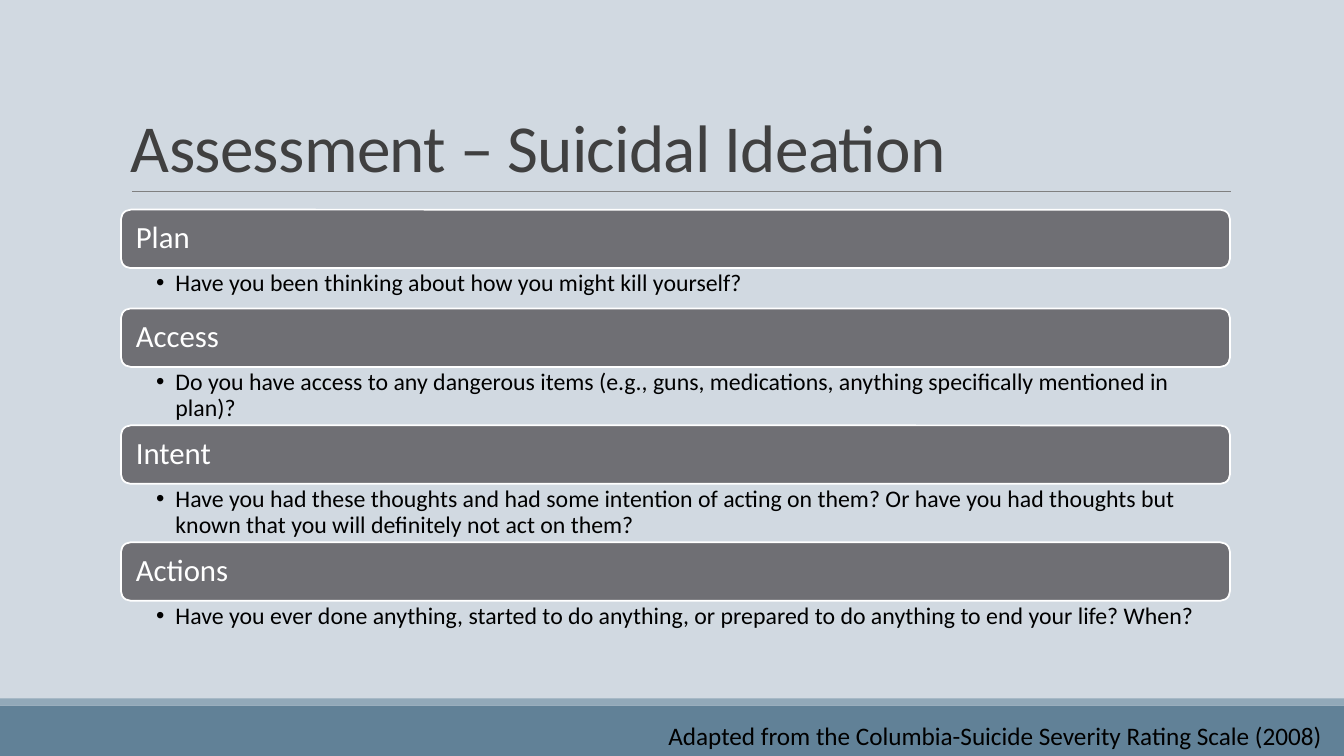
from lxml import etree
from pptx import Presentation
from pptx.dml.color import RGBColor
from pptx.enum.shapes import MSO_CONNECTOR, MSO_SHAPE
from pptx.enum.text import MSO_ANCHOR, PP_ALIGN
from pptx.oxml.ns import qn
from pptx.util import Inches, Pt

RECTANGLE = MSO_SHAPE.RECTANGLE
ROUNDED = MSO_SHAPE.ROUNDED_RECTANGLE
STRAIGHT = MSO_CONNECTOR.STRAIGHT
TOP, MIDDLE, BOTTOM = MSO_ANCHOR.TOP, MSO_ANCHOR.MIDDLE, MSO_ANCHOR.BOTTOM
LEFT = PP_ALIGN.LEFT

FONT = "Calibri"
COLORS = {
    "background": "D1D9E1",
    "footer": "618197",
    "stripe": "92A9B9",
    "rule": "808080",
    "title": "404040",
    "header": "6F6F74",
    "white": "FFFFFF",
    "black": "000000",
}
LIST_LEFT, LIST_TOP, LIST_WIDTH = 1.2, 2.08, 11
HEADER_HEIGHT = 0.58
BULLET_INDENT = 0.19
SECTIONS = [
    ("Plan", "Have you been thinking about how you might kill yourself?", 0.4),
    ("Access", "Do you have access to any dangerous items (e.g., guns, medications, "
     "anything specifically mentioned in plan)?", 0.58),
    ("Intent", "Have you had these thoughts and had some intention of acting on them? "
     "Or have you had thoughts but known that you will definitely not act on them?", 0.58),
    ("Actions", "Have you ever done anything, started to do anything, or prepared to do "
     "anything to end your life? When?", 0.4),
]


def color(name):
    return RGBColor.from_string(COLORS[name])


def write_text(shape, text, size, ink="black", anchor=TOP, insets=(0.1, 0.05, 0.1, 0.05),
               line_spacing=1.0, letter_spacing=None, bullet=False):
    frame = shape.text_frame
    frame.word_wrap = True
    frame.vertical_anchor = anchor
    (frame.margin_left, frame.margin_top,
     frame.margin_right, frame.margin_bottom) = map(Inches, insets)
    para = frame.paragraphs[0]
    para.alignment = LEFT
    para.line_spacing = line_spacing
    span = para.add_run()
    span.text = text
    span.font.name = FONT
    span.font.size = Pt(size)
    span.font.color.rgb = color(ink)
    if letter_spacing is not None:
        span.font._element.set("spc", str(round(letter_spacing * 100)))
    if bullet:
        properties = para._p.get_or_add_pPr()
        properties.set("marL", str(Inches(BULLET_INDENT)))
        properties.set("indent", str(-Inches(BULLET_INDENT)))
        etree.SubElement(properties, qn("a:buFont"), typeface="Arial")
        etree.SubElement(properties, qn("a:buChar"), char="•")


def add_text(page, bounds, text, size, **text_format):
    box = page.shapes.add_textbox(*map(Inches, bounds))
    write_text(box, text, size, **text_format)


def add_block(page, kind, bounds, fill, outline=None):
    block = page.shapes.add_shape(kind, *map(Inches, bounds))
    block.shadow.inherit = False
    block.fill.solid()
    block.fill.fore_color.rgb = color(fill)
    if outline:
        block.line.color.rgb = color(outline)
        block.line.width = Pt(1.25)
    else:
        block.line.fill.background()
    return block


def add_rule(page, left, right, top):
    rule = page.shapes.add_connector(STRAIGHT, *map(Inches, (left, top, right, top)))
    rule.line.color.rgb = color("rule")
    rule.line.width = Pt(0.5)
    etree.SubElement(rule._element.spPr, qn("a:effectLst"))


def add_section(page, top, heading, question, question_height):
    header = add_block(page, ROUNDED, (LIST_LEFT, top, LIST_WIDTH, HEADER_HEIGHT),
                       "header", outline="white")
    write_text(header, heading, 22, ink="white", anchor=MIDDLE,
               insets=(0.12, 0.09, 0.12, 0.09), line_spacing=0.9)
    add_text(page, (LIST_LEFT, top + HEADER_HEIGHT, LIST_WIDTH, question_height), question, 17,
             insets=(0.35, 0.03, 0.17, 0.03), line_spacing=0.9, bullet=True)


def main():
    deck = Presentation()
    deck.slide_width, deck.slide_height = Inches(13.33), Inches(7.5)
    page = deck.slides.add_slide(deck.slide_layouts[6])
    page.background.fill.solid()
    page.background.fill.fore_color.rgb = color("background")

    add_block(page, RECTANGLE, (0, 7, 13.33, 0.5), "footer")
    add_block(page, RECTANGLE, (0, 6.93, 13.33, 0.07), "stripe")
    add_rule(page, 1.31, 12.21, 1.9)
    add_text(page, (1.2, 0.31, 11, 1.59), "Assessment – Suicidal Ideation", 48, ink="title",
             anchor=BOTTOM, line_spacing=0.85, letter_spacing=-0.5)

    top = LIST_TOP
    for heading, question, question_height in SECTIONS:
        add_section(page, top, heading, question, question_height)
        top += HEADER_HEIGHT + question_height

    add_text(page, (6.53, 7.1, 6.8, 0.4),
             "Adapted from the Columbia-Suicide Severity Rating Scale (2008)", 18)
    deck.save("out.pptx")


if __name__ == "__main__":
    main()
